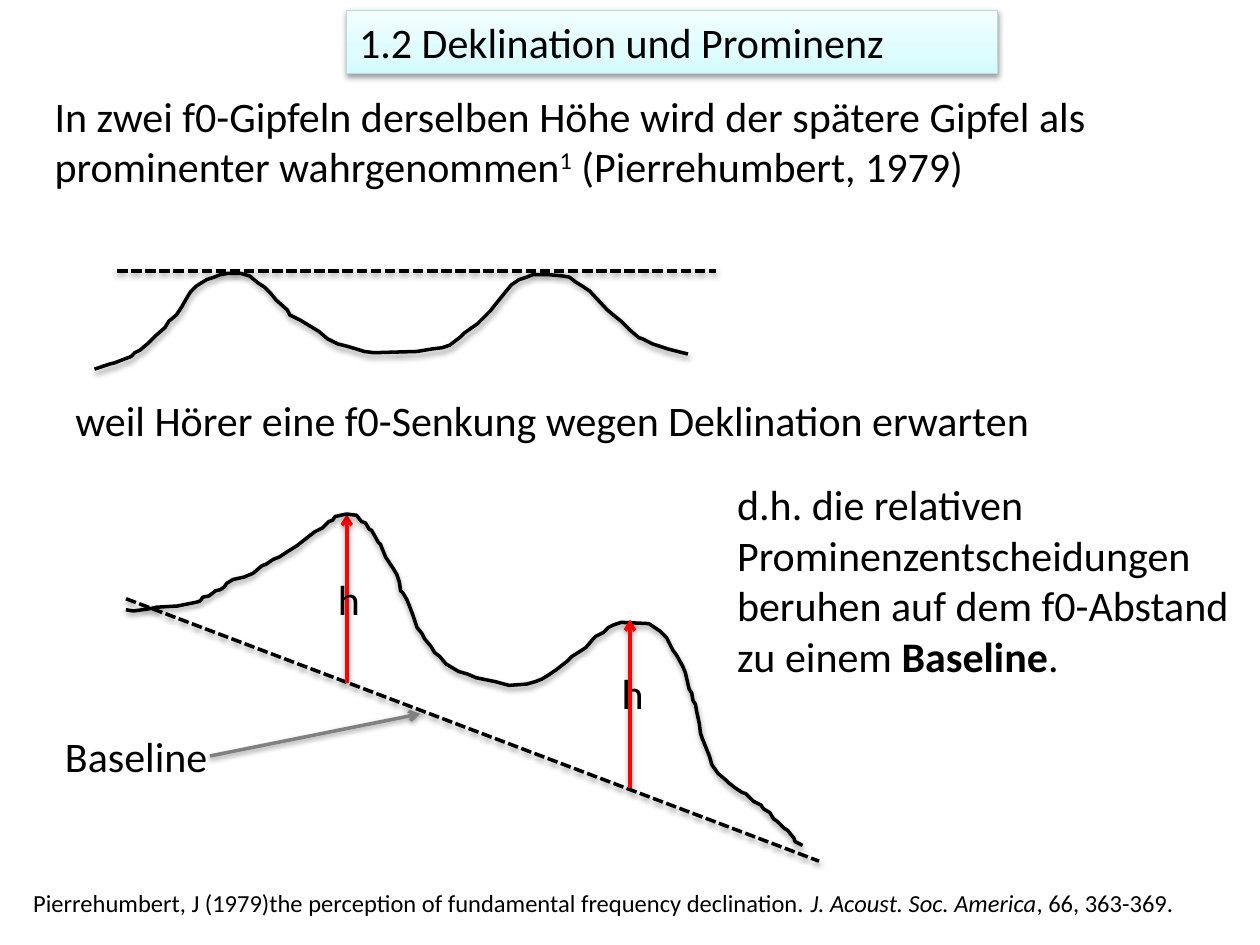
from copy import deepcopy
from dataclasses import dataclass

from lxml.etree import SubElement
from pptx import Presentation
from pptx.dml.color import RGBColor
from pptx.enum.dml import MSO_LINE
from pptx.enum.shapes import MSO_CONNECTOR, MSO_SHAPE
from pptx.enum.text import MSO_AUTO_SIZE, PP_ALIGN
from pptx.oxml.ns import qn
from pptx.util import Cm, Pt


@dataclass(frozen=True)
class Theme:
    font: str = "Calibri"
    body_size: int = 24
    source_size: int = 14
    line_width: float = 2
    border_width: float = 0.75
    ink: str = "000000"
    height_arrow: str = "FF0000"
    pointer: str = "808080"
    title_border: str = "B6DCDF"
    title_gradient: tuple = ((0, "D3FBFF"), (0.35, "DFFCFF"), (1, "F2FEFF"))


THEME = Theme()
CURVE_UNIT = Cm(0.0254)

# Curve points are in CURVE_UNIT, from left to right.
EQUAL_PEAKS = [
    (75, 293), (87, 289), (91, 288), (104, 283), (107, 280), (111, 278), (117, 273),
    (123, 267), (131, 260), (134, 255), (140, 250), (144, 244), (148, 237), (151, 232),
    (156, 227), (159, 225), (164, 222), (170, 220), (175, 218), (181, 217), (191, 217),
    (198, 219), (204, 224), (210, 228), (215, 233), (219, 238), (228, 246), (230, 250),
    (238, 254), (243, 257), (253, 263), (260, 269), (268, 273), (276, 275), (286, 278),
    (289, 279), (297, 280), (331, 279), (343, 277), (351, 276), (357, 274), (366, 267),
    (369, 264), (379, 257), (389, 247), (393, 242), (397, 237), (401, 232), (406, 226),
    (412, 222), (418, 220), (423, 218), (435, 218), (446, 219), (452, 220), (457, 224),
    (462, 227), (468, 231), (482, 246), (488, 251), (493, 255), (500, 262), (507, 268),
    (510, 269), (518, 273), (524, 275), (530, 277), (538, 279), (546, 281),
]
DECLINING_PEAKS = [
    (100, 484), (106, 485), (120, 483), (124, 482), (141, 481), (156, 478), (159, 477),
    (161, 474), (166, 473), (171, 469), (175, 468), (178, 466), (180, 463), (185, 460),
    (194, 458), (201, 455), (208, 449), (211, 448), (217, 444), (222, 442), (228, 438),
    (236, 433), (241, 429), (250, 422), (256, 419), (261, 414), (264, 413), (266, 410),
    (275, 408), (283, 409), (287, 414), (290, 415), (293, 420), (295, 421), (300, 430),
    (302, 432), (306, 442), (308, 445), (312, 451), (315, 456), (317, 462), (318, 469),
    (320, 471), (323, 476), (325, 481), (328, 489), (331, 498), (335, 503), (337, 507),
    (342, 513), (345, 518), (349, 521), (354, 527), (359, 530), (364, 533), (371, 535),
    (378, 538), (393, 541), (404, 544), (418, 543), (425, 541), (430, 539), (435, 536),
    (441, 532), (450, 525), (454, 521), (462, 516), (465, 514), (471, 507), (473, 505),
    (479, 502), (483, 498), (487, 496), (493, 494), (515, 495), (518, 497), (524, 501),
    (529, 506), (531, 510), (534, 516), (537, 520), (542, 529), (544, 534), (547, 547),
    (549, 550), (550, 556), (552, 559), (553, 565), (555, 574), (556, 582), (557, 585),
    (561, 595), (563, 600), (565, 607), (570, 614), (576, 619), (578, 621), (583, 625),
    (589, 629), (592, 630), (596, 634), (598, 636), (604, 639), (606, 642), (611, 645),
    (614, 650), (617, 652), (620, 655), (622, 657), (625, 659), (630, 665), (631, 668),
    (637, 671),
]


def add_shadow(shape):
    """Cast a soft shadow straight down; call it once the line is set."""
    effects = SubElement(shape._element.spPr, qn("a:effectLst"))
    shadow = SubElement(effects, qn("a:outerShdw"), blurRad=str(Pt(3.15)),
                        dist=str(Pt(1.57)), dir="5400000", rotWithShape="0")
    color = SubElement(shadow, qn("a:srgbClr"), val=THEME.ink)
    SubElement(color, qn("a:alpha"), val="38000")


def style_line(shape, color, width=THEME.line_width):
    shape.line.color.rgb = RGBColor.from_string(color)
    shape.line.width = Pt(width)


def write_text(shape, parts, size):
    """Fill a shape with one paragraph of (text, style) parts."""
    text_frame = shape.text_frame
    text_frame.word_wrap = True
    text_frame.auto_size = MSO_AUTO_SIZE.SHAPE_TO_FIT_TEXT
    paragraph = text_frame.paragraphs[0]
    paragraph.alignment = PP_ALIGN.LEFT
    for text, style in parts:
        run = paragraph.add_run()
        run.text = text
        run.font.name = THEME.font
        run.font.size = Pt(size)
        run.font.color.rgb = RGBColor.from_string(THEME.ink)
        if style == "bold":
            run.font.bold = True
        elif style == "italic":
            run.font.italic = True
        elif style == "superscript":
            run._r.get_or_add_rPr().set("baseline", "30000")


def add_text(shapes, box, *parts, size=THEME.body_size):
    write_text(shapes.add_textbox(*map(Cm, box)), parts, size)


def add_title(shapes, box, text):
    shape = shapes.add_shape(MSO_SHAPE.RECTANGLE, *map(Cm, box))
    shape.fill.gradient()
    shape.fill.gradient_angle = 90
    stop_list = shape._element.spPr.find(qn("a:gradFill")).find(qn("a:gsLst"))
    stop_list.append(deepcopy(stop_list[-1]))
    for stop, (position, color) in zip(shape.fill.gradient_stops, THEME.title_gradient):
        stop.position = position
        stop.color.rgb = RGBColor.from_string(color)
    style_line(shape, THEME.title_border, THEME.border_width)
    add_shadow(shape)
    write_text(shape, [(text, None)], THEME.body_size)


def add_line(shapes, start, end, color):
    connector = shapes.add_connector(MSO_CONNECTOR.STRAIGHT, *map(Cm, start + end))
    style_line(connector, color)
    add_shadow(connector)
    return connector


def add_dashed_line(shapes, start, end):
    add_line(shapes, start, end, THEME.ink).line.dash_style = MSO_LINE.SQUARE_DOT


def add_arrow(shapes, start, end, color):
    connector = add_line(shapes, start, end, color)
    SubElement(connector.line._get_or_add_ln(), qn("a:tailEnd"), type="arrow")


def add_curve(shapes, points):
    builder = shapes.build_freeform(*points[0], scale=CURVE_UNIT)
    builder.add_line_segments(points[1:], close=False)
    shape = builder.convert_to_shape()
    shape.fill.background()
    style_line(shape, THEME.ink)
    add_shadow(shape)


def add_declination_diagram(shapes):
    add_dashed_line(shapes, (2.54, 12.07), (16.51, 17.36))
    add_arrow(shapes, (6.99, 13.76), (6.99, 10.37), THEME.height_arrow)
    add_text(shapes, (14.61, 9.53, 10.8, 4.37),
             ("d.h. die relativen Prominenzentscheidungen beruhen auf dem "
              "f0-Abstand zu einem ", None),
             ("Baseline", "bold"), (".", None))
    for left, top in ((6.56, 11.43), (12.28, 13.34)):
        add_text(shapes, (left, top, 1.9, 1.28), ("h", None))
    add_text(shapes, (1.06, 14.61, 4.02, 1.28), ("Baseline", None))
    add_arrow(shapes, (4.23, 15.24), (8.47, 14.39), THEME.pointer)
    add_curve(shapes, DECLINING_PEAKS)
    add_arrow(shapes, (12.7, 15.88), (12.7, 12.49), THEME.height_arrow)


def main():
    presentation = Presentation()
    presentation.slide_width, presentation.slide_height = Cm(25.4), Cm(19.05)
    slide = presentation.slides.add_slide(presentation.slide_layouts[6])
    shapes = slide.shapes

    add_title(shapes, (6.99, 0.21, 13.12, 1.28), "1.2 Deklination und Prominenz")
    add_text(shapes, (0.42, 17.78, 24.98, 0.86),
             ("Pierrehumbert, J (1979)the perception of fundamental frequency "
              "declination. ", None),
             ("J. Acoust. Soc. America", "italic"), (", 66, 363-369.", None),
             size=THEME.source_size)
    add_text(shapes, (0.85, 1.69, 24.13, 2.31),
             ("In zwei f0-Gipfeln derselben Höhe wird der spätere Gipfel als "
              "prominenter wahrgenommen", None),
             ("1", "superscript"), (" (Pierrehumbert, 1979)", None))
    add_curve(shapes, EQUAL_PEAKS)
    add_dashed_line(shapes, (2.36, 5.46), (14.43, 5.46))
    add_text(shapes, (1.27, 7.83, 21.17, 1.28),
             ("weil Hörer eine f0-Senkung wegen Deklination erwarten", None))
    add_declination_diagram(shapes.add_group_shape().shapes)

    presentation.save("out.pptx")


if __name__ == "__main__":
    main()
